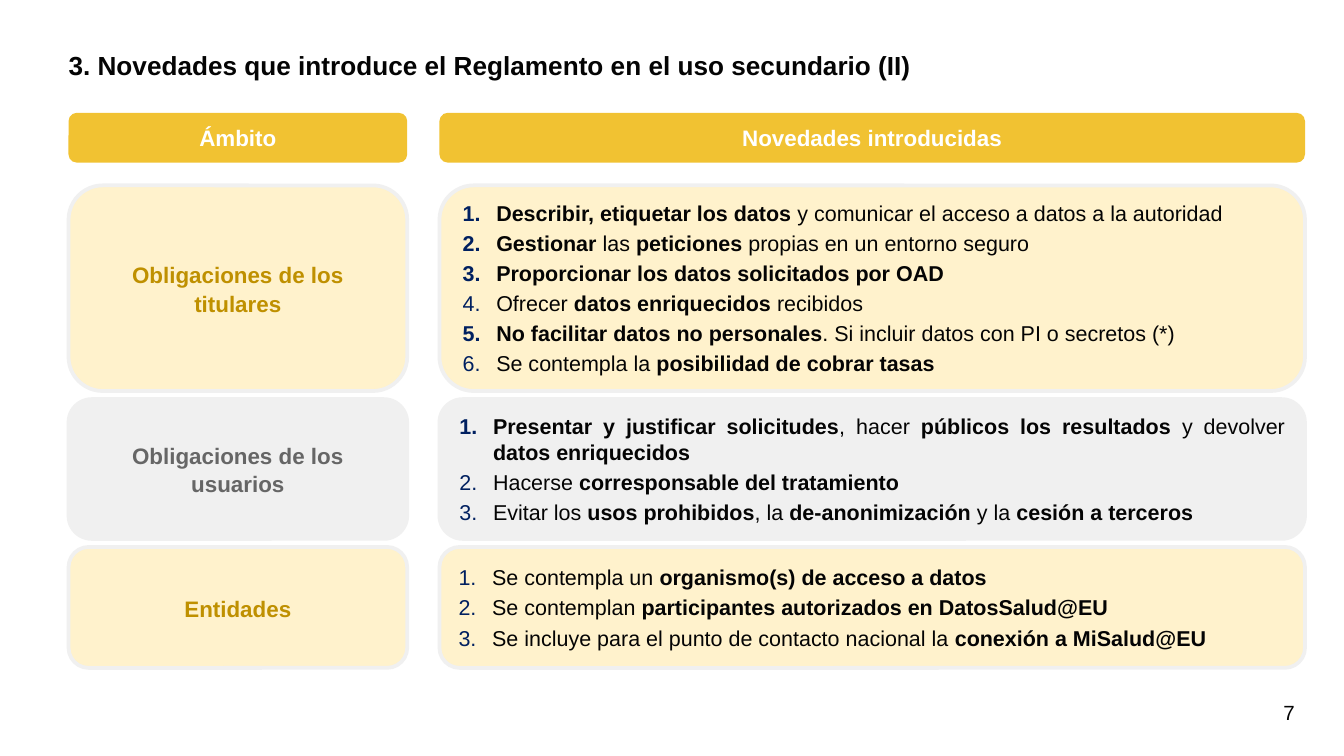
from lxml.etree import SubElement
from pptx import Presentation
from pptx.dml.color import RGBColor
from pptx.enum.shapes import MSO_SHAPE
from pptx.enum.text import MSO_ANCHOR, MSO_AUTO_SIZE, PP_ALIGN
from pptx.oxml.ns import qn
from pptx.util import Inches, Pt

COLORS = {
    "text": "040404", "white": "FFFFFF", "header": "F1C232", "cream": "FFF2CC",
    "gray": "F0F0F0", "gold": "BF9000", "dark_gray": "666666", "number": "002060",
}
SLIDE_W = 10
SLIDE_H = SLIDE_W * 9 / 16
LEFT, LEFT_W = 0.51, 2.52
RIGHT, RIGHT_W = 3.27, 6.44

# label, top, height, label height, label colour, fill, points (bold between **)
ROWS = [
    ("Obligaciones de los titulares", 1.38, 1.53, 0.79, "gold", "cream", [
        "**Describir, etiquetar los datos **y comunicar el acceso a datos a la autoridad",
        "**Gestionar** las **peticiones** propias en un entorno seguro",
        "**Proporcionar los datos solicitados por OAD**",
        "Ofrecer **datos enriquecidos **recibidos",
        "**No facilitar datos no personales**. Si incluir datos con PI o secretos (*)",
        "Se contempla la **posibilidad de cobrar tasas**",
    ]),
    ("Obligaciones de los usuarios", 2.97, 1.04, 0.54, "dark_gray", "gray", [
        "**Presentar y justificar solicitudes**, hacer **públicos los resultados **"
        "y devolver **datos enriquecidos**",
        "Hacerse **corresponsable del tratamiento**",
        "Evitar los **usos prohibidos**, la **de-anonimización** y la **cesión a terceros**",
    ]),
    ("Entidades", 4.07, 0.9, 0.46, "gold", "cream", [
        "Se contempla un **organismo(s) de acceso a datos**",
        "Se contemplan **participantes autorizados en DatosSalud@EU**",
        "Se incluye para el punto de contacto nacional la **conexión a MiSalud@EU**",
    ]),
]


def rgb(name):
    return RGBColor.from_string(COLORS[name])


def number_paragraph(p):
    """Turn the paragraph into an automatically numbered item."""
    pPr = p._p.get_or_add_pPr()
    pPr.set("marL", str(Inches(0.25)))
    pPr.set("indent", str(Inches(-0.25)))
    SubElement(SubElement(pPr, qn("a:buClr")), qn("a:srgbClr"), val=COLORS["number"])
    SubElement(pPr, qn("a:buFont"), typeface="Arial")
    SubElement(pPr, qn("a:buAutoNum"), type="arabicPeriod")


def write(tf, paragraphs, size=12, color="text", align=PP_ALIGN.LEFT,
          anchor=MSO_ANCHOR.TOP, inset=(0.1, 0.05), numbered=False, spacing=None):
    """Fill a text frame; text between ** is bold."""
    tf.word_wrap = True
    tf.auto_size = MSO_AUTO_SIZE.NONE
    tf.vertical_anchor = anchor
    tf.margin_left = tf.margin_right = Inches(inset[0])
    tf.margin_top = tf.margin_bottom = Inches(inset[1])
    for i, text in enumerate(paragraphs):
        p = tf.add_paragraph() if i else tf.paragraphs[0]
        p.alignment = align
        if spacing:
            p.line_spacing = spacing
        if i:
            p.space_before = Pt(size * 0.2)
        if numbered:
            number_paragraph(p)
        for j, part in enumerate(text.split("**")):
            if part:
                r = p.add_run()
                r.text = part
                r.font.name = "Arial"
                r.font.size = Pt(size)
                r.font.bold = j % 2 == 1
                r.font.color.rgb = rgb(color)


class SlideBuilder:
    def __init__(self, prs):
        self.s = prs.slides.add_slide(prs.slide_layouts[5])

    def title(self, text, x, y, w, h):
        sp = self.s.shapes.title
        sp.left, sp.top, sp.width, sp.height = map(Inches, (x, y, w, h))
        write(sp.text_frame, [f"**{text}**"], size=14, inset=(0, 0))

    def text(self, text, x, y, w, h, **fmt):
        sp = self.s.shapes.add_textbox(*map(Inches, (x, y, w, h)))
        write(sp.text_frame, [text], **fmt)

    def box(self, x, y, w, h, fill, line=None, paragraphs=(), **fmt):
        sp = self.s.shapes.add_shape(MSO_SHAPE.ROUNDED_RECTANGLE,
                                     *map(Inches, (x, y, w, h)))
        sp.shadow.inherit = False
        sp.fill.solid()
        sp.fill.fore_color.rgb = rgb(fill)
        if line:
            sp.line.color.rgb = rgb(line)
            sp.line.width = Pt(2)
        else:
            sp.line.fill.background()
        write(sp.text_frame, paragraphs, anchor=MSO_ANCHOR.MIDDLE,
              inset=(0.1, 0.07), **fmt)

    def header(self, text, x, w):
        self.box(x, 0.84, w, 0.37, "header", paragraphs=[f"**{text}**"],
                 color="white", align=PP_ALIGN.CENTER)

    def row(self, label, y, h, label_h, color, fill, points):
        self.box(LEFT, y, LEFT_W, h, fill, "gray")
        self.box(RIGHT, y, RIGHT_W, h, fill, "gray", points, size=11.5,
                 align=PP_ALIGN.JUSTIFY, numbered=True)
        self.text(f"**{label}**", LEFT + 0.27, y + (h - label_h) / 2, LEFT_W - 0.54,
                  label_h, color=color, align=PP_ALIGN.CENTER,
                  anchor=MSO_ANCHOR.MIDDLE, inset=(0.1, 0.1), spacing=1.06)


def main():
    prs = Presentation()
    prs.slide_width, prs.slide_height = Inches(SLIDE_W), Inches(SLIDE_H)
    slide = SlideBuilder(prs)
    slide.title("3. Novedades que introduce el Reglamento en el uso secundario (II)",
                LEFT, 0.37, 9.22, 0.37)
    slide.header("Novedades introducidas", RIGHT, RIGHT_W)
    slide.header("Ámbito", LEFT, LEFT_W)
    for row in ROWS:
        slide.row(*row)
    slide.text("7", 9.45, 5.16, 0.55, 0.44, size=11)
    prs.save("out.pptx")


if __name__ == "__main__":
    main()
